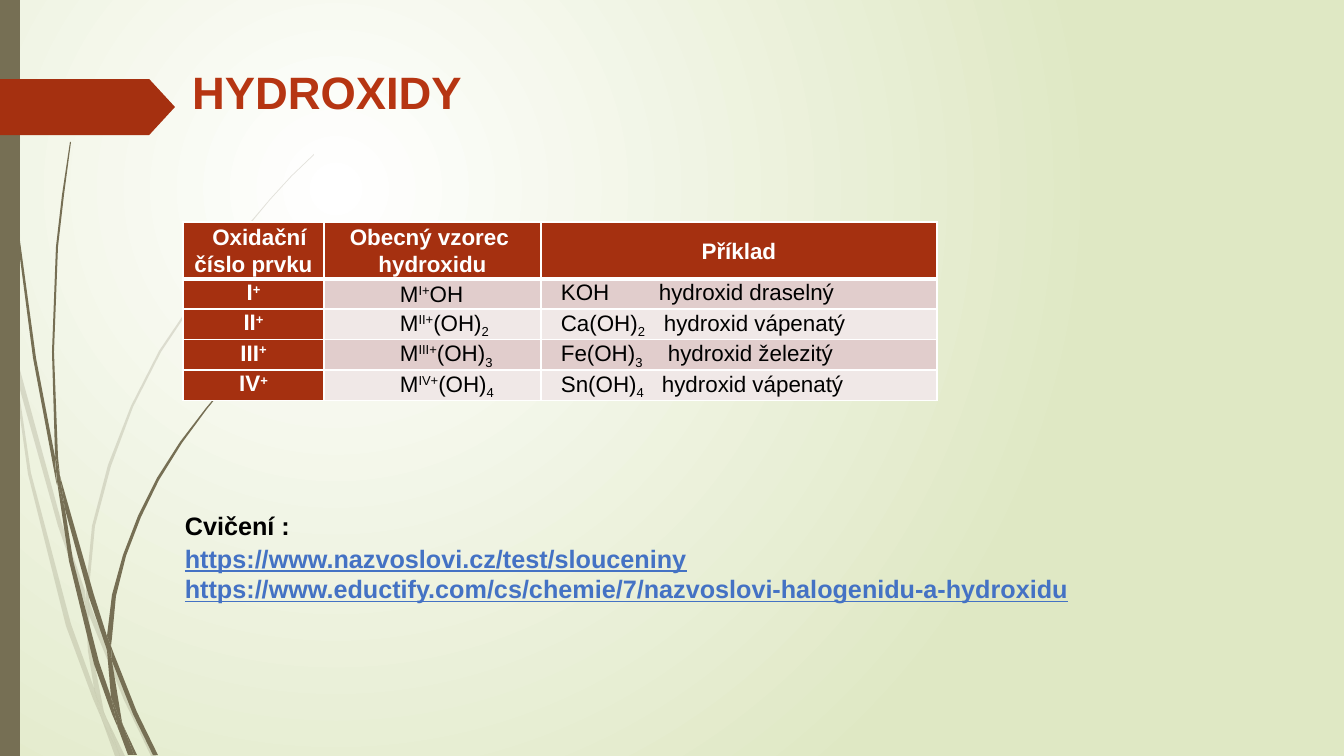
from lxml import etree
from pptx import Presentation, util as u
from pptx.dml.color import RGBColor
from pptx.enum import shapes, text
from pptx.oxml.ns import qn

PX = u.Inches(1) / 100.8
WHITE = RGBColor(0xFF, 0xFF, 0xFF)
BLACK = RGBColor(0, 0, 0)
MEADOW = RGBColor(0xDF, 0xE8, 0xC4)
OLIVE = RGBColor(0x76, 0x6F, 0x54)
BRICK = RGBColor(0xA5, 0x30, 0x10)
TITLE_RED = RGBColor(0xB6, 0x35, 0x12)
LINK_BLUE = RGBColor(0x44, 0x72, 0xC4)
BANDS = [RGBColor(0xE1, 0xCD, 0xCC), RGBColor(0xF0, 0xE8, 0xE7)]


def px(*lengths):
    return [u.Emu(round(n * PX)) for n in lengths]


prs = Presentation()
prs.slide_width, prs.slide_height = px(1344, 756)
slide = prs.slides.add_slide(prs.slide_layouts[5])

# Background: white glow fading to green
backdrop = slide.background.fill
backdrop.gradient()
for stop, colour, position in zip(backdrop.gradient_stops, (WHITE, MEADOW), (0, 1)):
    stop.color.rgb = colour
    stop.position = position
gradient = slide._element.find(".//" + qn("a:gradFill"))
gradient.remove(gradient.find(qn("a:lin")))
glow = etree.SubElement(gradient, qn("a:path"), path="circle")
etree.SubElement(glow, qn("a:fillToRect"), l="50000", t="50000", r="100000", b="100000")

# Grass: outline corners of each blade piece
pale_grass = [
    [(11, 353), (9, 325), (0, 284), (0, 301), (10, 347)],
    [(58, 526), (85, 604), (85, 591), (62, 524), (14, 348), (17, 379)],
    [(93, 612), (89, 601), (89, 615), (124, 700), (151, 756), (156, 756), (128, 698)],
    [(120, 756), (125, 756), (106, 717)],
    [(94, 688), (71, 624), (31, 473), (17, 379), (11, 353), (28, 474), (66, 626),
     (93, 699), (102, 720), (100, 713)],
    [(85, 604), (88, 651), (94, 688), (97, 698), (106, 717), (104, 712), (92, 651),
     (89, 615), (89, 613)],
    [(89, 589), (95, 526), (111, 466), (133, 407), (161, 352), (231, 247), (270, 200),
     (292, 176), (314, 155), (314, 154), (291, 176), (270, 199), (230, 246), (159, 351),
     (131, 406), (108, 465), (92, 526), (86, 589), (86, 591), (89, 601)],
    [(102, 720), (115, 756), (120, 756)],
    [(89, 613), (89, 615), (89, 601), (86, 591), (85, 604)],
    [(97, 698), (94, 688), (100, 713), (102, 720), (120, 756), (106, 717)],
]
dark_grass = [
    [(7, 111), (17, 235), (33, 358), (56, 481), (57, 485), (55, 461), (55, 457), (36, 358),
     (19, 234), (8, 110), (5, 48), (4, 0), (3, 0), (4, 48)],
    [(89, 597), (107, 650), (107, 638), (107, 636), (94, 595), (60, 476), (65, 509)],
    [(114, 654), (111, 646), (112, 661), (133, 714), (153, 755), (158, 755), (137, 712)],
    [(111, 697), (99, 662), (73, 560), (65, 509), (57, 481), (69, 561), (94, 664),
     (112, 714), (118, 728), (117, 723)],
    [(60, 476), (58, 457), (54, 352), (58, 247), (64, 195), (71, 142), (70, 142), (62, 195),
     (56, 247), (52, 352), (55, 453)],
    [(134, 755), (137, 755), (123, 725)],
    [(57, 481), (65, 509), (60, 476), (55, 453), (55, 457)],
    [(112, 638), (116, 596), (126, 556), (141, 517), (159, 480), (182, 443), (207, 409),
     (233, 377), (247, 362), (263, 347), (262, 347), (247, 361), (233, 376), (206, 408),
     (180, 442), (157, 478), (138, 516), (123, 555), (112, 595), (107, 636), (111, 646)],
    [(118, 728), (128, 755), (132, 755)],
    [(107, 650), (111, 697), (117, 712), (123, 725), (122, 722), (112, 661), (110, 656)],
    [(107, 650), (110, 656), (112, 661), (111, 646), (107, 636), (107, 638)],
    [(117, 712), (111, 697), (117, 723), (118, 728), (131, 755), (134, 755), (123, 725)],
]
decor = []
for corners in pale_grass + dark_grass:
    outline = [px(*corner) for corner in corners]
    builder = slide.shapes.build_freeform(*outline[0])
    builder.add_line_segments(outline[1:])
    decor.append((builder.convert_to_shape(), OLIVE))

side_bar = slide.shapes.add_shape(shapes.MSO_SHAPE.RECTANGLE, *px(0, 0, 20, 756))
arrow = slide.shapes.add_shape(shapes.MSO_SHAPE.PENTAGON, *px(0, 79, 175, 56))
arrow.adjustments[0] = 0.46
decor += [(side_bar, OLIVE), (arrow, BRICK)]
for part, colour in decor:
    part.shadow.inherit = False
    part.line.fill.background()
    part.fill.solid()
    part.fill.fore_color.rgb = colour
for blade, _ in decor[:len(pale_grass)]:
    tint = blade._element.spPr.find(".//" + qn("a:srgbClr"))
    etree.SubElement(tint, qn("a:alpha"), val="20000")

# Title
title = slide.shapes.title
title.left, title.top, title.width, title.height = px(182, 59, 1082, 141)
heading = title.text_frame
heading.text = "HYDROXIDY"
heading.auto_size = text.MSO_AUTO_SIZE.NONE
heading.vertical_anchor = text.MSO_ANCHOR.TOP
heading.paragraphs[0].alignment = text.PP_ALIGN.LEFT
title_font = heading.paragraphs[0].runs[0].font
for key, value in dict(name="Arial", size=u.Pt(32.4), bold=True).items():
    setattr(title_font, key, value)
title_font.color.rgb = TITLE_RED

# Table: each cell is a list of paragraphs, each paragraph a list of (text, baseline %)
hydroxides = [
    ("I", "OH", "", "KOH", "hydroxid draselný", 98),
    ("II", "(OH)", "2", "Ca(OH)", "hydroxid vápenatý", 103),
    ("III", "(OH)", "3", "Fe(OH)", "hydroxid železitý", 107),
    ("IV", "(OH)", "4", "Sn(OH)", "hydroxid vápenatý", 101),
]
grid = [[[[("Oxidační", 0)], [("číslo prvku", 0)]],
         [[("Obecný vzorec ", 0)], [("hydroxidu", 0)]],
         [[("Příklad", 0)]]]]
for number, group, count, formula, name, _ in hydroxides:
    grid.append([[[(number, 0), ("+", 30)]],
                 [[("M", 0), (number + "+", 30), (group, 0), (count, -25)]],
                 [[(formula, 0), (count, -25), ("\t" + name, 0)]]])

table = slide.shapes.add_table(5, 3, *px(183, 222, 754, 177)).table
table.first_row = table.horz_banding = False
for column, width in zip(table.columns, px(141, 217, 396)):
    column.width = width
for row, height in zip(table.rows, px(57, 30, 30, 30, 30)):
    row.height = height

for r, row in enumerate(grid):
    for c, lines in enumerate(row):
        cell = table.cell(r, c)
        brick = r == 0 or c == 0
        inset = 7 if brick else (7, 76, 20)[c]
        cell.margin_left, cell.margin_right, cell.margin_top, cell.margin_bottom = px(inset, 7, 0, 0)
        middle = r == 0 or c == 1
        cell.vertical_anchor = text.MSO_ANCHOR.MIDDLE if middle else text.MSO_ANCHOR.TOP
        for side in "LRTB":
            thick = (r, side) in ((0, "B"), (1, "T"))
            border = etree.SubElement(cell._tc.get_or_add_tcPr(), qn("a:ln" + side),
                                      w=str(u.Pt(3 if thick else 1)))
            paint = etree.SubElement(border, qn("a:solidFill"))
            etree.SubElement(paint, qn("a:srgbClr"), val=str(WHITE))
        cell.fill.solid()
        cell.fill.fore_color.rgb = BRICK if brick else BANDS[(r - 1) % 2]
        for i, pieces in enumerate(lines):
            line = cell.text_frame.paragraphs[0] if i == 0 else cell.text_frame.add_paragraph()
            line.line_spacing = 1.07
            line.alignment = text.PP_ALIGN.CENTER if brick else text.PP_ALIGN.LEFT
            if r > 0 and c == 2:
                tabs = etree.SubElement(line._p.get_or_add_pPr(), qn("a:tabLst"))
                etree.SubElement(tabs, qn("a:tab"), pos=str(px(hydroxides[r - 1][-1])[0]), algn="l")
            for words, baseline in pieces:
                if not words:
                    continue
                run = line.add_run()
                run.text = words
                for key, value in dict(name="Arial", size=u.Pt(16), bold=brick).items():
                    setattr(run.font, key, value)
                run.font.color.rgb = WHITE if brick else BLACK
                if baseline:
                    run._r.get_or_add_rPr().set("baseline", str(baseline * 1000))
first_heading = table.cell(0, 0).text_frame.paragraphs[0]
first_heading._p.get_or_add_pPr().set("marL", str(px(12)[0]))

# Exercises
exercises = slide.shapes.add_textbox(*px(175, 505, 943, 105)).text_frame
exercises.word_wrap = True
exercise_lines = [
    ("Cvičení :", BLACK, 0),
    ("https://www.nazvoslovi.cz/test/slouceniny", LINK_BLUE, 2),
    ("https://www.eductify.com/cs/chemie/7/nazvoslovi-halogenidu-a-hydroxidu", LINK_BLUE, 0),
]
for i, (words, colour, gap) in enumerate(exercise_lines):
    line = exercises.paragraphs[0] if i == 0 else exercises.add_paragraph()
    if gap:
        line.space_before = u.Pt(gap)
    run = line.add_run()
    run.text = words
    for key, value in dict(name="Arial", size=u.Pt(18), bold=True, underline=i > 0).items():
        setattr(run.font, key, value)
    run.font.color.rgb = colour

prs.save("out.pptx")
